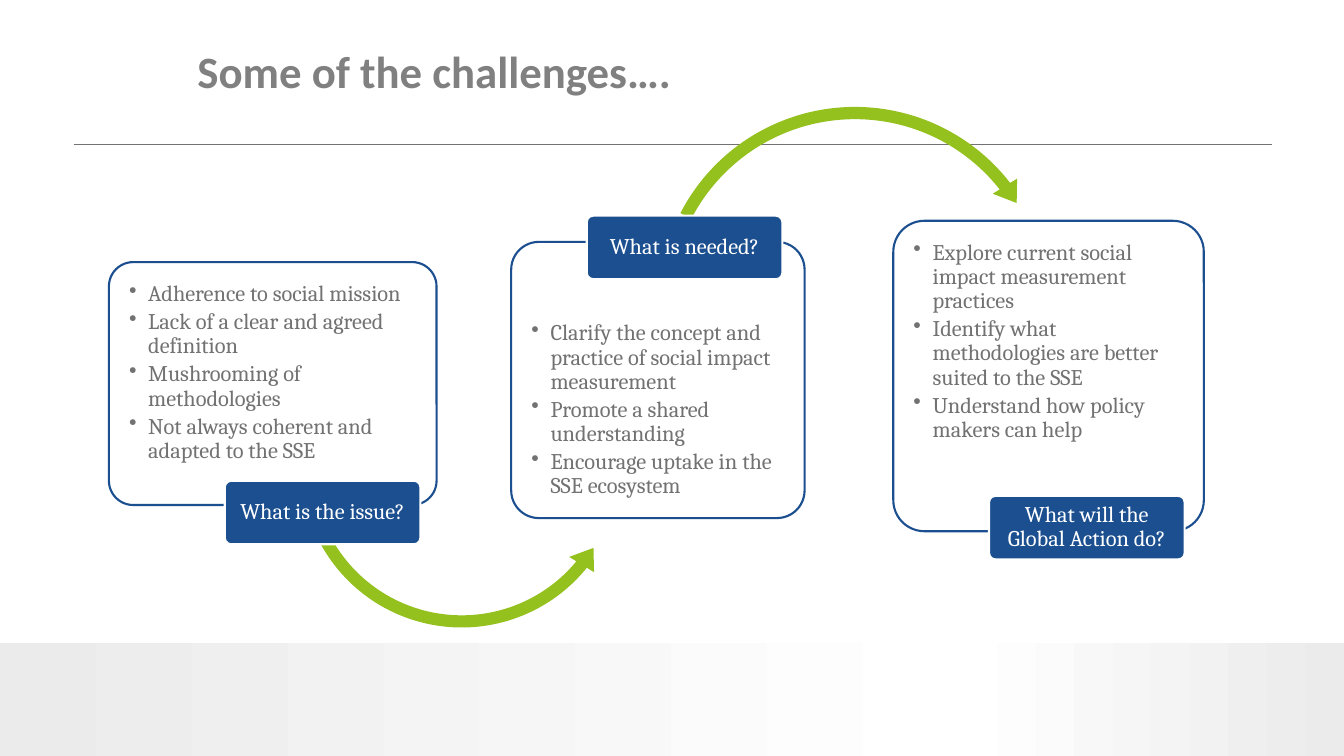
from pptx import Presentation
from pptx.dml.color import RGBColor
from pptx.enum.shapes import MSO_CONNECTOR, MSO_SHAPE
from pptx.enum.text import MSO_ANCHOR, PP_ALIGN
from pptx.oxml.ns import qn
from pptx.util import Inches, Pt
from lxml.etree import SubElement

WHITE = RGBColor(0xFF, 0xFF, 0xFF)
BLUE = RGBColor(0x1B, 0x4F, 0x8F)
GREEN = RGBColor(0x95, 0xC1, 0x1F)
GREY = RGBColor(0x72, 0x72, 0x72)
TITLE_GREY = RGBColor(0x80, 0x80, 0x80)
BAND_GREY = RGBColor(0xEB, 0xEB, 0xEB)

LABEL_W, LABEL_H = 1.94, 0.63
PAD = 0.06

CARDS = [
    {
        "box": (1.08, 2.6, 3.25, 2.41),
        "text": (0, 1.78),
        "label": ("What is the issue?", 1.15, 2.17),
        "bullets": [
            "Adherence to social mission",
            "Lack of a clear and agreed definition",
            "Mushrooming of methodologies",
            "Not always coherent and adapted to the SSE",
        ],
        "arrow": (MSO_SHAPE.LEFT_CIRCULAR_ARROW, 1.82, 0.35, 3.36,
                  (0.036, 4.543, 23.54, 91.486, 0.043)),
    },
    {
        "box": (5.07, 2.4, 2.91, 2.74),
        "text": (0.59, 2.03),
        "label": ("What is needed?", 0.75, -0.26),
        "bullets": [
            "Clarify the concept and practice of social impact measurement",
            "Promote a shared understanding",
            "Encourage uptake in the SSE ecosystem",
        ],
        "arrow": (MSO_SHAPE.CIRCULAR_ARROW, 1.38, -1.42, 4.06,
                  (0.03, 3.704, 193.199, 124.414, 0.035)),
    },
    {
        "box": (8.86, 2.19, 3.08, 3.08),
        "text": (0, 2.28),
        "label": ("What will the Global Action do?", 0.95, 2.73),
        "bullets": [
            "Explore current social impact measurement practices",
            "Identify what methodologies are better suited to the SSE",
            "Understand how policy makers can help",
        ],
        "arrow": None,
    },
]


def add_run(p, text, size, font, color, bold=False):
    r = p.add_run()
    r.text = text
    r.font.size = Pt(size)
    r.font.name = font
    r.font.bold = bold
    r.font.color.rgb = color


def add_filled(s, kind, x, y, w, h, fill, line=None):
    sp = s.shapes.add_shape(kind, Inches(x), Inches(y), Inches(w), Inches(h))
    sp.shadow.inherit = False
    sp.fill.solid()
    sp.fill.fore_color.rgb = fill
    if line is None:
        sp.line.fill.background()
    else:
        sp.line.color.rgb = line
        sp.line.width = Pt(1.5)
    return sp


def add_text_frame(s, x, y, w, h, inset):
    tf = s.shapes.add_textbox(Inches(x), Inches(y), Inches(w), Inches(h)).text_frame
    tf.word_wrap = True
    tf.margin_left = tf.margin_right = Inches(inset)
    tf.margin_top = tf.margin_bottom = Inches(inset)
    return tf


def add_header(s, x, y, w):
    rule = s.shapes.add_connector(MSO_CONNECTOR.STRAIGHT, Inches(x), Inches(y + 1.05),
                                  Inches(x + w), Inches(y + 1.05))
    rule.line.color.rgb = GREY
    rule.line.width = Pt(0.5)
    SubElement(rule._element.spPr, qn("a:effectLst"))
    tf = add_text_frame(s, x + 1.13, y, w - 1.13, 0.72, 0.1)
    tf.margin_top = tf.margin_bottom = Inches(0.05)
    add_run(tf.paragraphs[0], "Some of the challenges….", 32, "Calibri", TITLE_GREY, True)


def add_footer_band(s, y, w, h):
    split = 9.51
    for x, width, colors in ((split, w - split, (WHITE, BAND_GREY)),
                             (0, split, (BAND_GREY, WHITE))):
        sp = add_filled(s, MSO_SHAPE.RECTANGLE, x, y, width, h, WHITE)
        sp.fill.gradient()
        sp.fill.gradient_angle = 0
        for stop, color in zip(sp.fill.gradient_stops, colors):
            stop.color.rgb = color


def add_bullets(s, x, y, w, h, bullets):
    tf = add_text_frame(s, x, y, w, h, 0.14)
    for i, text in enumerate(bullets):
        p = tf.paragraphs[0] if i == 0 else tf.add_paragraph()
        p.line_spacing = 0.9
        p.space_after = Pt(2.8)
        pPr = p._p.get_or_add_pPr()
        pPr.set("marL", str(Inches(0.19)))
        pPr.set("indent", str(-Inches(0.19)))
        SubElement(pPr, qn("a:buChar")).set("char", "•")
        add_run(p, text, 16, "Cambria", GREY)


def add_label(s, x, y, text):
    sp = add_filled(s, MSO_SHAPE.ROUNDED_RECTANGLE, x, y, LABEL_W, LABEL_H, BLUE, WHITE)
    sp.adjustments[0] = 0.1
    tf = sp.text_frame
    tf.word_wrap = True
    tf.vertical_anchor = MSO_ANCHOR.MIDDLE
    tf.margin_left = tf.margin_right = Inches(0.05)
    tf.margin_top = tf.margin_bottom = Inches(0.04)
    p = tf.paragraphs[0]
    p.alignment = PP_ALIGN.CENTER
    p.line_spacing = 0.9
    add_run(p, text, 16, "Cambria", WHITE)


def add_card(s, card):
    x, y, w, h = card["box"]
    frame = add_filled(s, MSO_SHAPE.ROUNDED_RECTANGLE, x, y, w, h, WHITE, BLUE)
    frame.adjustments[0] = 0.1
    color = frame.fill._xPr.find(qn("a:solidFill"))[0]
    SubElement(color, qn("a:alpha")).set("val", "90000")
    dy, text_h = card["text"]
    add_bullets(s, x + PAD, y + PAD + dy, w - 2 * PAD, text_h, card["bullets"])
    if card["arrow"]:
        kind, dx, dy, size, adjustments = card["arrow"]
        arrow = add_filled(s, kind, x + dx, y + dy, size, size, GREEN)
        for i, value in enumerate(adjustments):
            arrow.adjustments[i] = value
    text, dx, dy = card["label"]
    add_label(s, x + dx, y + dy, text)


def main():
    prs = Presentation()
    prs.slide_width = Inches(13.33)
    prs.slide_height = Inches(7.5)
    s = prs.slides.add_slide(prs.slide_layouts[6])
    add_footer_band(s, 6.38, 13.33, 1.12)
    add_header(s, 0.73, 0.38, 11.89)
    for card in CARDS:
        add_card(s, card)
    prs.save("out.pptx")


if __name__ == "__main__":
    main()
